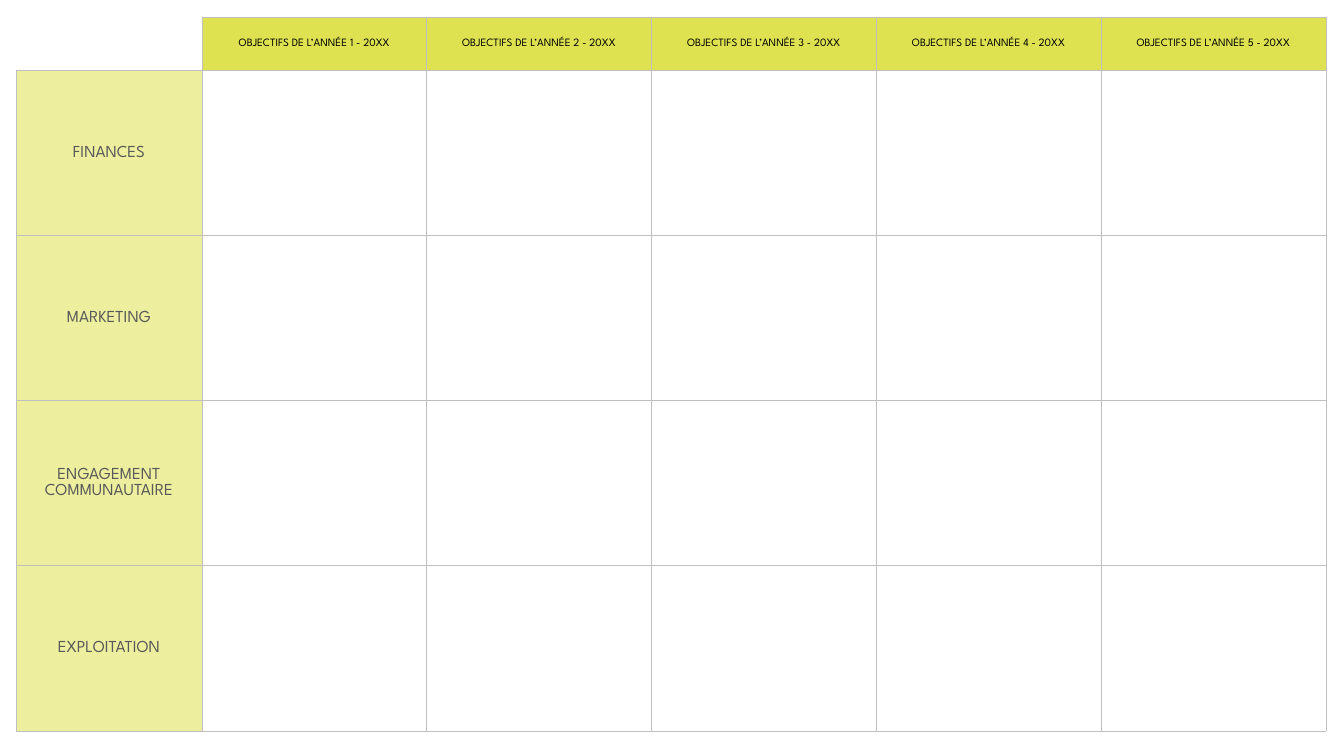
import dataclasses

import pptx
import pptx.dml.color
import pptx.enum.text
import pptx.oxml
import pptx.oxml.ns
import pptx.util

PX = 914400 / 100.8


@dataclasses.dataclass(frozen=True)
class Theme:
    font: str = "League Spartan"
    year_fill: str = "DFE250"
    year_text: str = "000000"
    year_size: int = 8
    area_fill: str = "EDEF9F"
    area_text: str = "595959"
    area_size: int = 12
    rule: str = "BFBFBF"
    rule_width: float = 0.5


@dataclasses.dataclass(frozen=True)
class Box:
    left: int
    top: int
    width: int
    height: int


THEME = Theme()
YEARS = [f"OBJECTIFS DE L’ANNÉE {year} - 20XX" for year in range(1, 6)]
AREAS = ["FINANCES", "MARKETING", "ENGAGEMENT COMMUNAUTAIRE", "EXPLOITATION"]


def px(length):
    return pptx.util.Emu(round(length * PX))


def color(value):
    return pptx.dml.color.RGBColor.from_string(value)


def set_borders(cell, visible_sides):
    properties = cell._tc.get_or_add_tcPr()
    width = pptx.util.Pt(THEME.rule_width)
    for side in "LRTB":
        paint = "<a:noFill/>"
        if side in visible_sides:
            paint = f'<a:solidFill><a:srgbClr val="{THEME.rule}"/></a:solidFill>'
        properties.append(pptx.oxml.parse_xml(
            f'<a:ln{side} {pptx.oxml.ns.nsdecls("a")} w="{int(width)}">{paint}</a:ln{side}>'))


def write_label(cell, text, size, text_color, fill_color):
    cell.fill.solid()
    cell.fill.fore_color.rgb = color(fill_color)
    cell.vertical_anchor = pptx.enum.text.MSO_ANCHOR.MIDDLE
    cell.margin_left = cell.margin_right = cell.margin_top = px(1)
    cell.margin_bottom = 0
    para = cell.text_frame.paragraphs[0]
    para.alignment = pptx.enum.text.PP_ALIGN.CENTER
    span = para.add_run()
    span.text = text
    span.font.name = THEME.font
    span.font.size = pptx.util.Pt(size)
    span.font.color.rgb = color(text_color)


def add_objectives_grid(page, box, area_width, year_height):
    frame = page.shapes.add_table(
        len(AREAS) + 1, len(YEARS) + 1,
        px(box.left), px(box.top), px(box.width), px(box.height))
    table = frame.table
    table.first_row = False
    table.horz_banding = False
    for index, column in enumerate(table.columns):
        column.width = px((box.width - area_width) / len(YEARS) if index else area_width)
    for index, row in enumerate(table.rows):
        row.height = px((box.height - year_height) / len(AREAS) if index else year_height)

    for cell in table.iter_cells():
        set_borders(cell, "RB" if cell is table.cell(0, 0) or cell == table.cell(0, 0) else "LRTB")
        cell.fill.background()
    for column, year in enumerate(YEARS, start=1):
        write_label(table.cell(0, column), year,
                    THEME.year_size, THEME.year_text, THEME.year_fill)
    for row, area in enumerate(AREAS, start=1):
        write_label(table.cell(row, 0), area,
                    THEME.area_size, THEME.area_text, THEME.area_fill)


def main():
    deck = pptx.Presentation()
    deck.slide_width = px(1344)
    deck.slide_height = px(756)
    page = deck.slides.add_slide(deck.slide_layouts[6])
    add_objectives_grid(page, Box(16, 17, 1310, 714), area_width=186, year_height=53)
    deck.save("out.pptx")


if __name__ == "__main__":
    main()
